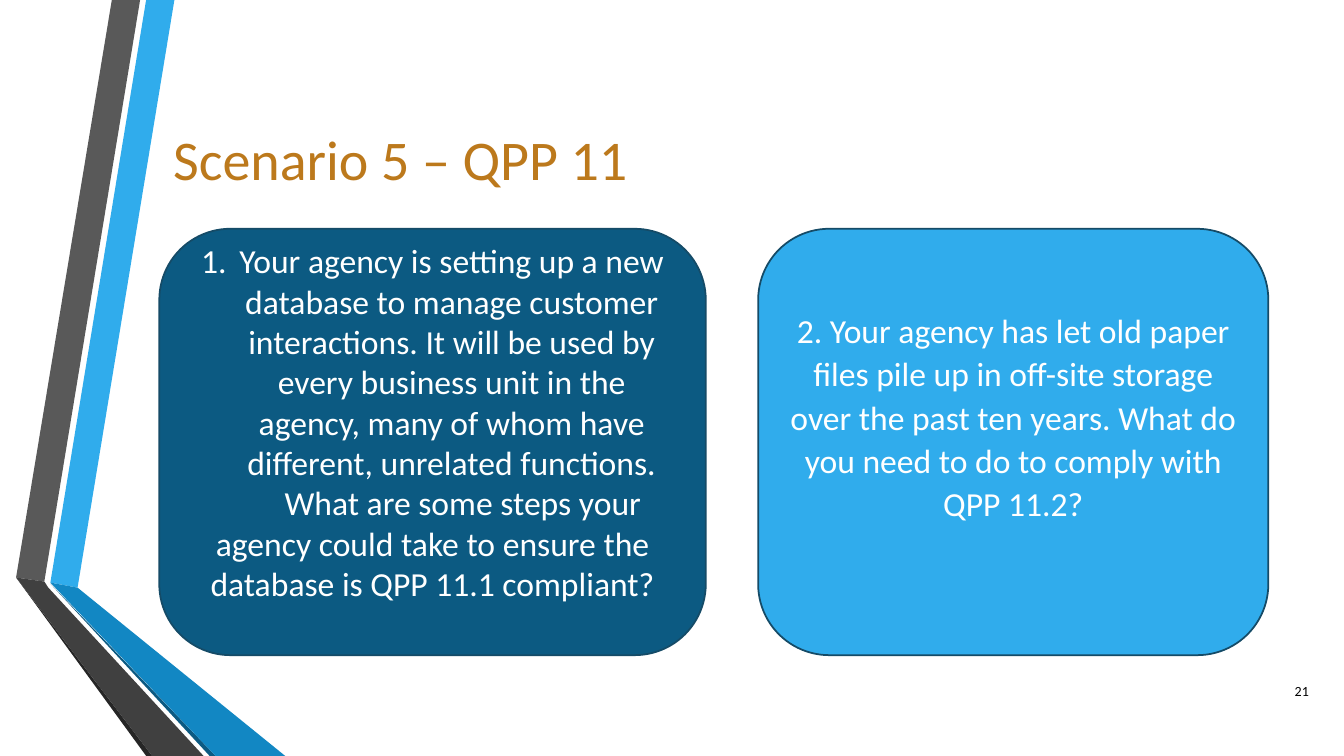
"""Build the Scenario 5 discussion slide with two question cards."""
from dataclasses import dataclass

import pptx
import pptx.dml.color
import pptx.enum.shapes
import pptx.enum.text
import pptx.oxml
import pptx.oxml.ns
import pptx.util

Inches = pptx.util.Inches
Pt = pptx.util.Pt
Align = pptx.enum.text.PP_ALIGN


@dataclass(frozen=True)
class Theme:
    """Hold the colours, font and type sizes of the slide."""
    font: str = "Calibri"
    title_size: int = 40
    body_size: int = 24
    number_size: int = 10
    gold: str = "BC791C"
    white: str = "FFFFFF"
    black: str = "000000"
    navy: str = "0C5A82"
    outline: str = "154B67"
    sky: str = "30ACEC"
    blue: str = "1287C3"
    grey: str = "595959"
    charcoal: str = "404040"
    soot: str = "262626"


THEME = Theme()

RIBBONS = (
    (THEME.sky, ((0.5, 5.78), (0.77, 5.83), (1.73, 0), (1.45, 0))),
    (THEME.grey, ((1.39, 0), (1.11, 0), (0.16, 5.73), (0.44, 5.77))),
    (THEME.soot, ((0.16, 5.73), (1.45, 7.5), (1.51, 7.5))),
    (THEME.navy, ((0.5, 5.79), (2.08, 7.5), (2.14, 7.5))),
    (THEME.blue, ((0.5, 5.78), (2.14, 7.5), (2.83, 7.5), (0.77, 5.83))),
    (THEME.charcoal, ((2.02, 7.5), (0.48, 5.83), (0.44, 5.77), (0.16, 5.73), (1.51, 7.5))),
)

DATABASE_QUESTION = (
    "Your agency is setting up a new database to manage customer interactions. "
    "It will be used by every business unit in the agency, many of whom have "
    "different, unrelated functions.",
    "What are some steps your agency could take to ensure the database is "
    "QPP 11.1 compliant?",
)
STORAGE_QUESTION = (
    "2. Your agency has let old paper files pile up in off-site storage over the "
    "past ten years. What do you need to do to comply with QPP 11.2?",
)


def rgb(code):
    """Turn a hex code into a colour."""
    return pptx.dml.color.RGBColor.from_string(code)


def paint(shape, fill):
    """Give a shape a flat fill without shadow."""
    shape.shadow.inherit = False
    shape.fill.solid()
    shape.fill.fore_color.rgb = rgb(fill)


def write(shape, lines, size, colour, align):
    """Write paragraphs in a shape, centred vertically."""
    frame = shape.text_frame
    frame.word_wrap = True
    frame.vertical_anchor = pptx.enum.text.MSO_ANCHOR.MIDDLE
    frame.text = "\n".join(lines)
    for paragraph in frame.paragraphs:
        paragraph.alignment = align
        for span in paragraph.runs:
            span.font.name = THEME.font
            span.font.size = Pt(size)
            span.font.color.rgb = rgb(colour)
    return frame


def add_ribbon(page, fill, points):
    """Draw one piece of the folded ribbon."""
    corners = [(Inches(x), Inches(y)) for x, y in points]
    builder = page.shapes.build_freeform(*corners[0])
    builder.add_line_segments(corners[1:], close=True)
    ribbon = builder.convert_to_shape()
    paint(ribbon, fill)
    ribbon.line.fill.background()


def add_label(page, bounds, text, size, colour, align):
    """Add a single line of free text."""
    box = page.shapes.add_textbox(*map(Inches, bounds))
    write(box, [text], size, colour, align)


def add_card(page, left, width, fill, lines, bottom_inset):
    """Add a rounded question card and return its text frame."""
    card = page.shapes.add_shape(
        pptx.enum.shapes.MSO_SHAPE.ROUNDED_RECTANGLE,
        Inches(left), Inches(2.27), Inches(width), Inches(4.23))
    paint(card, fill)
    card.line.color.rgb = rgb(THEME.outline)
    card.line.width = Pt(1.25)
    frame = write(card, lines, THEME.body_size, THEME.white, Align.CENTER)
    frame.margin_bottom = Inches(bottom_inset)
    return frame


def indent(paragraph, margin, first_line):
    """Set the left margin and first-line indent of a paragraph."""
    properties = paragraph._p.get_or_add_pPr()
    properties.set("marL", str(Inches(margin)))
    properties.set("indent", str(Inches(first_line)))
    return properties


def number(paragraph):
    """Number a paragraph with a hanging indent."""
    properties = indent(paragraph, 0.38, -0.38)
    bullet = pptx.oxml.parse_xml(
        f'<a:buAutoNum {pptx.oxml.ns.nsdecls("a")} type="arabicPeriod"/>')
    properties.append(bullet)


def main():
    """Build and save the slide."""
    deck = pptx.Presentation()
    deck.slide_width, deck.slide_height = Inches(13.33), Inches(7.5)
    page = deck.slides.add_slide(deck.slide_layouts[6])
    for fill, points in RIBBONS:
        add_ribbon(page, fill, points)
    add_label(page, (1.62, 1.17, 10.96, 0.8), "Scenario 5 – QPP 11",
              THEME.title_size, THEME.gold, Align.LEFT)
    add_label(page, (12.48, 6.65, 0.6, 0.4), "21",
              THEME.number_size, THEME.black, Align.RIGHT)

    database = add_card(page, 1.58, 5.42, THEME.navy, DATABASE_QUESTION, 0.45)
    number(database.paragraphs[0])
    indent(database.paragraphs[1], 0, 0.6)

    storage = add_card(page, 7.52, 5.06, THEME.sky, STORAGE_QUESTION, 0.58)
    storage.paragraphs[0].line_spacing = 1.07
    deck.save("out.pptx")


if __name__ == "__main__":
    main()
